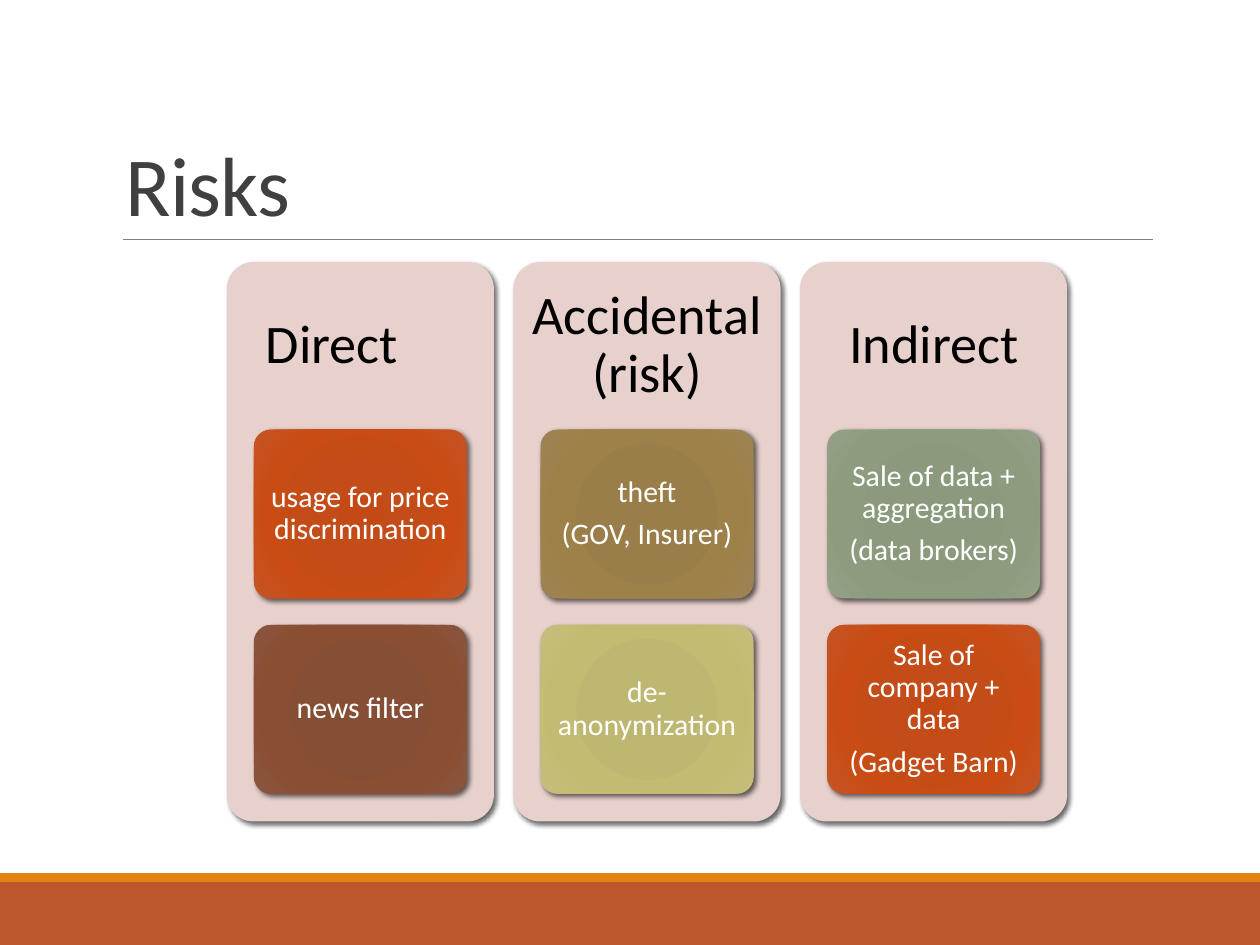
import pptx
import pptx.dml.color
import pptx.enum.shapes
import pptx.enum.text
import pptx.oxml
import pptx.oxml.ns
import pptx.util
from pptx.util import Inches

SHAPE = pptx.enum.shapes.MSO_SHAPE
ALIGN = pptx.enum.text.PP_ALIGN
ANCHOR = pptx.enum.text.MSO_ANCHOR
NS = pptx.oxml.ns.nsdecls("a")

# Gradient stops, from centre to edge
ORANGE = ["C44A15", "C34C18", "C94C15", "C45525"]
BROWN = ["874C32", "864E34", "8A4E33", "8A553D"]
TAN = ["9A7D48", "9A7E4A", "9E8049", "9E8454"]
YELLOW = ["BEB76E", "BEB771", "C3BB71", "C5BF7D"]
GREEN = ["8A987B", "8B997D", "8D9C7E", "94A187"]
STOPS = [0, 34, 70, 100]

COLUMNS = [
    ("Direct\t", [(["usage for price discrimination"], ORANGE),
                  (["news filter"], BROWN)]),
    ("Accidental (risk)", [(["theft", "(GOV, Insurer)"], TAN),
                           (["de-anonymization"], YELLOW)]),
    ("Indirect", [(["Sale of data + aggregation", "(data brokers)"], GREEN),
                  (["Sale of company + data", "(Gadget Barn)"], ORANGE)]),
]
LEFT, TOP = 1.8, 2.08
PANEL_W, PANEL_H, HEADER_H = 2.12, 4.44, 1.33
COLUMN_PITCH = (6.35 - LEFT) / 2
CARD_W, CARD_H = 1.69, 1.34
CARD_TOP, CARD_PITCH = 3.41, 1.55


def rgb(color):
    return pptx.dml.color.RGBColor.from_string(color)


def add_box(slide, kind, x, y, w, h, fill=None):
    sp = slide.shapes.add_shape(kind, Inches(x), Inches(y), Inches(w), Inches(h))
    sp.shadow.inherit = False
    sp.line.fill.background()
    if fill:
        sp.fill.solid()
        sp.fill.fore_color.rgb = rgb(fill)
    return sp


def add_rounded(slide, x, y, w, h, fill=None):
    """Add a rounded box with a soft shadow to its lower right."""
    sp = add_box(slide, SHAPE.ROUNDED_RECTANGLE, x, y, w, h, fill)
    sp.adjustments[0] = 0.1
    effects = sp._element.spPr.find(pptx.oxml.ns.qn("a:effectLst"))
    effects.append(pptx.oxml.parse_xml(
        f'<a:outerShdw {NS} blurRad="{pptx.util.Pt(3)}" dist="{pptx.util.Pt(2)}" '
        'dir="2700000" algn="ctr" rotWithShape="0"><a:srgbClr val="000000">'
        '<a:alpha val="60000"/></a:srgbClr></a:outerShdw>'))
    return sp


def fill_radial(sp, colors):
    stops = "".join(
        f'<a:gs pos="{pos * 1000}"><a:srgbClr val="{color}"/></a:gs>'
        for pos, color in zip(STOPS, colors))
    geometry = sp._element.spPr.find(pptx.oxml.ns.qn("a:prstGeom"))
    geometry.addnext(pptx.oxml.parse_xml(
        f'<a:gradFill {NS} rotWithShape="1"><a:gsLst>{stops}</a:gsLst>'
        '<a:path path="circle"><a:fillToRect l="100000" t="100000" '
        'r="100000" b="100000"/></a:path></a:gradFill>'))


def set_text(sp, lines, size, color, inset, anchor=ANCHOR.MIDDLE,
             align=ALIGN.CENTER, spacing=0.9):
    tf = sp.text_frame
    side, end = (Inches(v) for v in inset)
    frame = {"word_wrap": True, "vertical_anchor": anchor,
             "margin_left": side, "margin_right": side,
             "margin_top": end, "margin_bottom": end}
    for name, value in frame.items():
        setattr(tf, name, value)
    for i, line in enumerate(lines):
        p = tf.add_paragraph() if i else tf.paragraphs[0]
        p.alignment = align
        p.line_spacing = spacing
        if i:
            p.space_before = pptx.util.Pt(0.35 * size)
        r = p.add_run()
        r.text = line
        for name, value in {"name": "Calibri", "size": pptx.util.Pt(size)}.items():
            setattr(r.font, name, value)
        r.font.color.rgb = rgb(color)
    return tf


def add_text(slide, x, y, w, h, *args, **kwargs):
    sp = slide.shapes.add_textbox(Inches(x), Inches(y), Inches(w), Inches(h))
    return set_text(sp, *args, **kwargs)


def add_rule(slide, x1, x2, y):
    line = slide.shapes.add_connector(
        pptx.enum.shapes.MSO_CONNECTOR.STRAIGHT,
        Inches(x1), Inches(y), Inches(x2), Inches(y))
    line.line.color.rgb = rgb("808080")
    line.line.width = pptx.util.Pt(0.5)
    line._element.spPr.append(pptx.oxml.parse_xml(f"<a:effectLst {NS}/>"))


def add_column(slide, x, header, cards):
    add_rounded(slide, x, TOP, PANEL_W, PANEL_H, "E8D1CD")
    add_text(slide, x, TOP, PANEL_W, HEADER_H, [header], 31, "000000", (0.13, 0.13))
    card_x = x + (PANEL_W - CARD_W) / 2
    for row, (lines, colors) in enumerate(cards):
        card = add_rounded(slide, card_x, CARD_TOP + row * CARD_PITCH, CARD_W, CARD_H)
        fill_radial(card, colors)
        set_text(card, lines, 17, "FFFFFF", (0.05, 0.04))


def main():
    prs = pptx.Presentation()
    prs.slide_width, prs.slide_height = Inches(10), Inches(7.5)
    slide = prs.slides.add_slide(prs.slide_layouts[6])

    add_box(slide, SHAPE.RECTANGLE, 0, 7, 10, 0.5, "BD582C")
    add_box(slide, SHAPE.RECTANGLE, 0, 6.93, 10, 0.07, "E48312")
    add_rule(slide, 0.98, 9.15, 1.9)
    title = add_text(slide, 0.9, 0.31, 8.25, 1.59, ["Risks"], 48, "404040",
                     (0.1, 0.05), ANCHOR.BOTTOM, ALIGN.LEFT, 0.85)
    title.paragraphs[0].runs[0].font._element.set("spc", "-50")

    for i, (header, cards) in enumerate(COLUMNS):
        add_column(slide, LEFT + i * COLUMN_PITCH, header, cards)
    prs.save("out.pptx")


if __name__ == "__main__":
    main()
